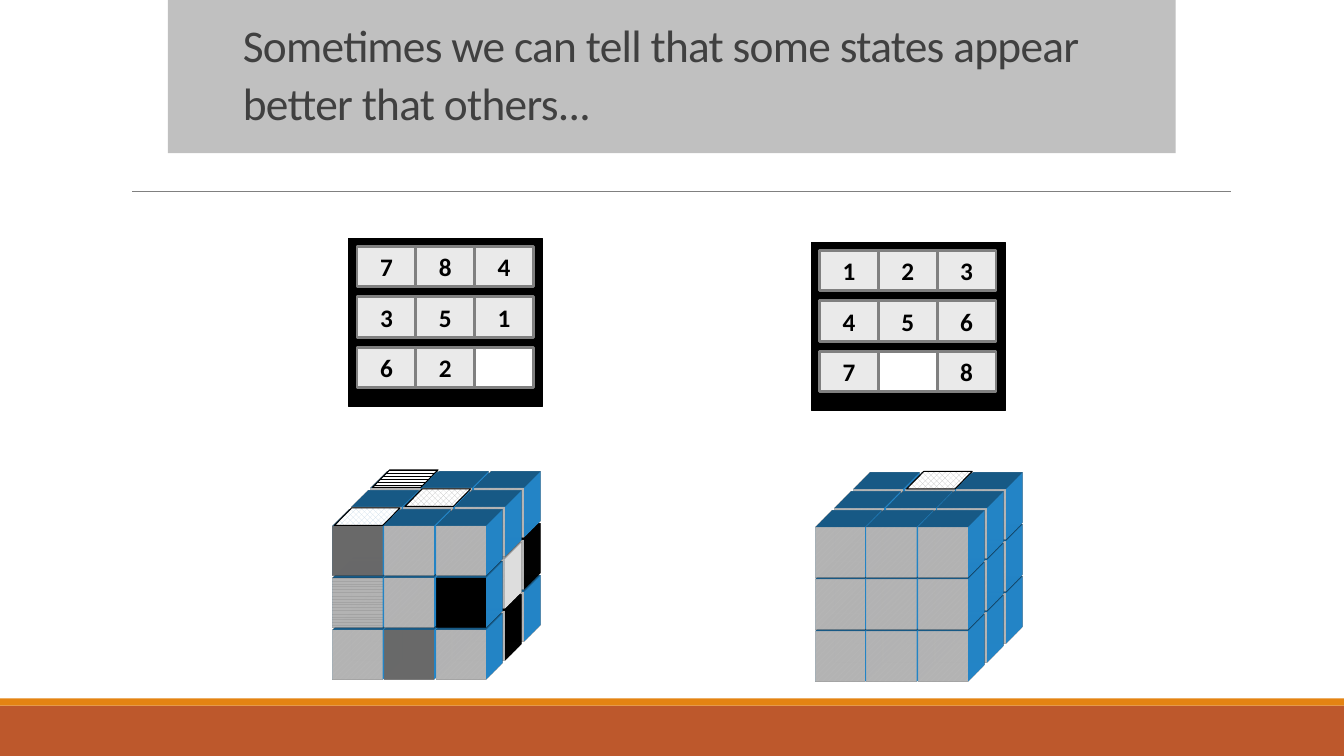
from dataclasses import dataclass, field
from itertools import product

from lxml.etree import SubElement
from pptx import Presentation
from pptx.dml.color import RGBColor
from pptx.dml.fill import FillFormat
from pptx.enum.dml import MSO_PATTERN_TYPE as Pattern
from pptx.enum.shapes import MSO_CONNECTOR, MSO_SHAPE as Preset
from pptx.enum.text import MSO_ANCHOR, PP_ALIGN
from pptx.oxml.ns import qn
from pptx.shapes.autoshape import Shape
from pptx.slide import Slide
from pptx.util import Cm, Pt

FONT = "Calibri"
WHITE = RGBColor(0xFF, 0xFF, 0xFF)
BLACK = RGBColor(0, 0, 0)
SILVER = RGBColor(0xC0, 0xC0, 0xC0)
GRAY = RGBColor(0x96, 0x96, 0x96)
RULE_GRAY = RGBColor(0x80, 0x80, 0x80)
TILE_GRAY = RGBColor(0xEA, 0xEA, 0xEA)
TITLE_GRAY = RGBColor(0x40, 0x40, 0x40)
PALE_BLUE = RGBColor(0xCC, 0xDD, 0xEA)
CUBE_BLUE = RGBColor(0x29, 0x98, 0xE3)
RUST = RGBColor(0xBD, 0x58, 0x2C)
ORANGE = RGBColor(0xE4, 0x83, 0x12)

TILE_WIDTH, TILE_HEIGHT, TILE_ROW_STEP, BOARD_MARGIN = 1.48, 1.02, 1.27, 0.21
CUBE_SIZE, CUBE_COLUMN_STEP, CUBE_ROW_STEP, LAYER_STEP = 1.25, 1.3, 1.31, 0.48


@dataclass(frozen=True)
class Paint:
    color: RGBColor
    pattern: Pattern | None = None


STRIPES = Paint(SILVER, Pattern.WIDE_UPWARD_DIAGONAL)
DIAMONDS = Paint(SILVER, Pattern.SOLID_DIAMOND)
CHECKS = Paint(PALE_BLUE, Pattern.LARGE_CHECKER_BOARD)
ZIGZAG = Paint(BLACK, Pattern.ZIG_ZAG)


@dataclass(frozen=True)
class Board:
    left: float
    top: float
    rows: tuple[str, str, str]


@dataclass(frozen=True)
class Cube:
    """Fronts are keyed by (row, column), sides by (layer, row), stickers by (layer, column)."""
    left: float
    top: float
    stickers: dict[tuple[int, int], Paint]
    fronts: dict[tuple[int, int], Paint] = field(default_factory=dict)
    sides: dict[tuple[int, int], RGBColor] = field(default_factory=dict)


BOARDS = (
    Board(20.45, 6.1, ("123", "456", "7 8")),
    Board(8.79, 6.0, ("784", "351", "62 ")),
)
CUBES = (
    Cube(20.55, 13.3, {(2, 1): DIAMONDS}),
    Cube(
        8.39, 13.26,
        stickers={(1, 1): DIAMONDS, (0, 0): CHECKS, (2, 0): ZIGZAG},
        fronts={(0, 0): Paint(GRAY), (1, 0): ZIGZAG, (1, 2): Paint(BLACK), (2, 1): Paint(GRAY)},
        sides={(1, 1): WHITE, (1, 2): BLACK, (2, 1): BLACK},
    ),
)


def apply_paint(fill: FillFormat, paint: Paint) -> None:
    if paint.pattern is None:
        fill.solid()
    else:
        fill.patterned()
        fill.pattern = paint.pattern
        fill.back_color.rgb = WHITE
    fill.fore_color.rgb = paint.color


def add_block(shapes, preset: Preset, left: float, top: float, width: float, height: float,
              paint: Paint, line: RGBColor | None = None, weight: float = 0.75) -> Shape:
    block = shapes.add_shape(preset, Cm(left), Cm(top), Cm(width), Cm(height))
    block.shadow.inherit = False
    apply_paint(block.fill, paint)
    if line is None:
        block.line.fill.background()
    else:
        block.line.color.rgb = line
        block.line.width = Pt(weight)
    return block


def extrude(block: Shape, color: RGBColor) -> None:
    """Give the block depth towards the upper right."""
    properties = block.element.spPr
    scene = SubElement(properties, qn("a:scene3d"))
    SubElement(scene, qn("a:camera"), prst="legacyObliqueTopRight")
    SubElement(scene, qn("a:lightRig"), rig="legacyFlat3", dir="b")
    solid = SubElement(properties, qn("a:sp3d"), extrusionH="430200", prstMaterial="legacyMatte")
    for bevel in ("a:bevelT", "a:bevelB"):
        SubElement(solid, qn(bevel), w="13500", h="13500", prst="angle")
    SubElement(SubElement(solid, qn("a:extrusionClr")), qn("a:srgbClr"), val=str(color))


def add_backdrop(page: Slide) -> None:
    add_block(page.shapes, Preset.RECTANGLE, 0, 17.78, 33.87, 1.27, Paint(RUST))
    add_block(page.shapes, Preset.RECTANGLE, 0, 17.6, 33.87, 0.18, Paint(ORANGE))
    rule = page.shapes.add_connector(MSO_CONNECTOR.STRAIGHT, Cm(3.33), Cm(4.82), Cm(31.01), Cm(4.82))
    rule.line.color.rgb = RULE_GRAY
    rule.line.width = Pt(0.5)
    SubElement(rule.element.spPr, qn("a:effectLst"))
    add_block(page.shapes, Preset.RECTANGLE, 4.23, 0, 25.4, 3.86, Paint(SILVER))


def add_title(page: Slide) -> None:
    box = page.shapes.add_textbox(Cm(5.87), Cm(0.3), Cm(21.59), Cm(3.18))
    frame = box.text_frame
    frame.word_wrap = True
    frame.vertical_anchor = MSO_ANCHOR.BOTTOM
    para = frame.paragraphs[0]
    para.line_spacing = 0.85
    for text, size in (("Sometimes we can tell that some states appear better that others...", 32.4),
                       (" ", 43.2)):
        span = para.add_run()
        span.text = text
        span.font.name = FONT
        span.font.size = Pt(size)
        span.font.color.rgb = TITLE_GRAY
        span.font._element.set("spc", "-50")


def add_board(page: Slide, board: Board) -> None:
    shapes = page.shapes.add_group_shape().shapes
    add_block(shapes, Preset.RECTANGLE, board.left, board.top, 4.88, 4.24, Paint(BLACK), BLACK)
    for row, column in product(range(3), repeat=2):
        digit = board.rows[row][column].strip()
        tile = add_block(shapes, Preset.RECTANGLE,
                         board.left + BOARD_MARGIN + column * TILE_WIDTH,
                         board.top + BOARD_MARGIN + row * TILE_ROW_STEP,
                         TILE_WIDTH, TILE_HEIGHT, Paint(TILE_GRAY if digit else WHITE), RULE_GRAY, 2)
        if digit:
            tile.text_frame.text = digit
            para = tile.text_frame.paragraphs[0]
            para.alignment = PP_ALIGN.CENTER
            font = para.runs[0].font
            font.name, font.size, font.bold = FONT, Pt(18), True
            font.color.rgb = BLACK


def add_cube(page: Slide, cube: Cube) -> None:
    """Draw the layers from back to front, each from its bottom row up."""
    shapes = page.shapes.add_group_shape().shapes
    for layer, row, column in product((2, 1, 0), (2, 1, 0), range(3)):
        paint = cube.fronts.get((row, column), STRIPES) if layer == 0 else STRIPES
        block = add_block(shapes, Preset.RECTANGLE,
                          cube.left + column * CUBE_COLUMN_STEP + layer * LAYER_STEP,
                          cube.top + row * CUBE_ROW_STEP - layer * LAYER_STEP,
                          CUBE_SIZE, CUBE_SIZE, paint)
        side = cube.sides.get((layer, row), CUBE_BLUE) if column == 2 else CUBE_BLUE
        extrude(block, side)
    for (layer, column), paint in cube.stickers.items():
        sticker = add_block(shapes, Preset.PARALLELOGRAM,
                            cube.left + 0.04 + column * CUBE_COLUMN_STEP + layer * LAYER_STEP,
                            cube.top - 0.46 - layer * LAYER_STEP, 1.65, 0.44, paint, BLACK)
        sticker.adjustments[0] = 0.98


def main() -> None:
    deck = Presentation()
    deck.slide_width, deck.slide_height = Cm(33.87), Cm(19.05)
    page = deck.slides.add_slide(deck.slide_layouts[6])
    add_backdrop(page)
    add_title(page)
    for board in BOARDS:
        add_board(page, board)
    for cube in CUBES:
        add_cube(page, cube)
    deck.save("out.pptx")


if __name__ == "__main__":
    main()
